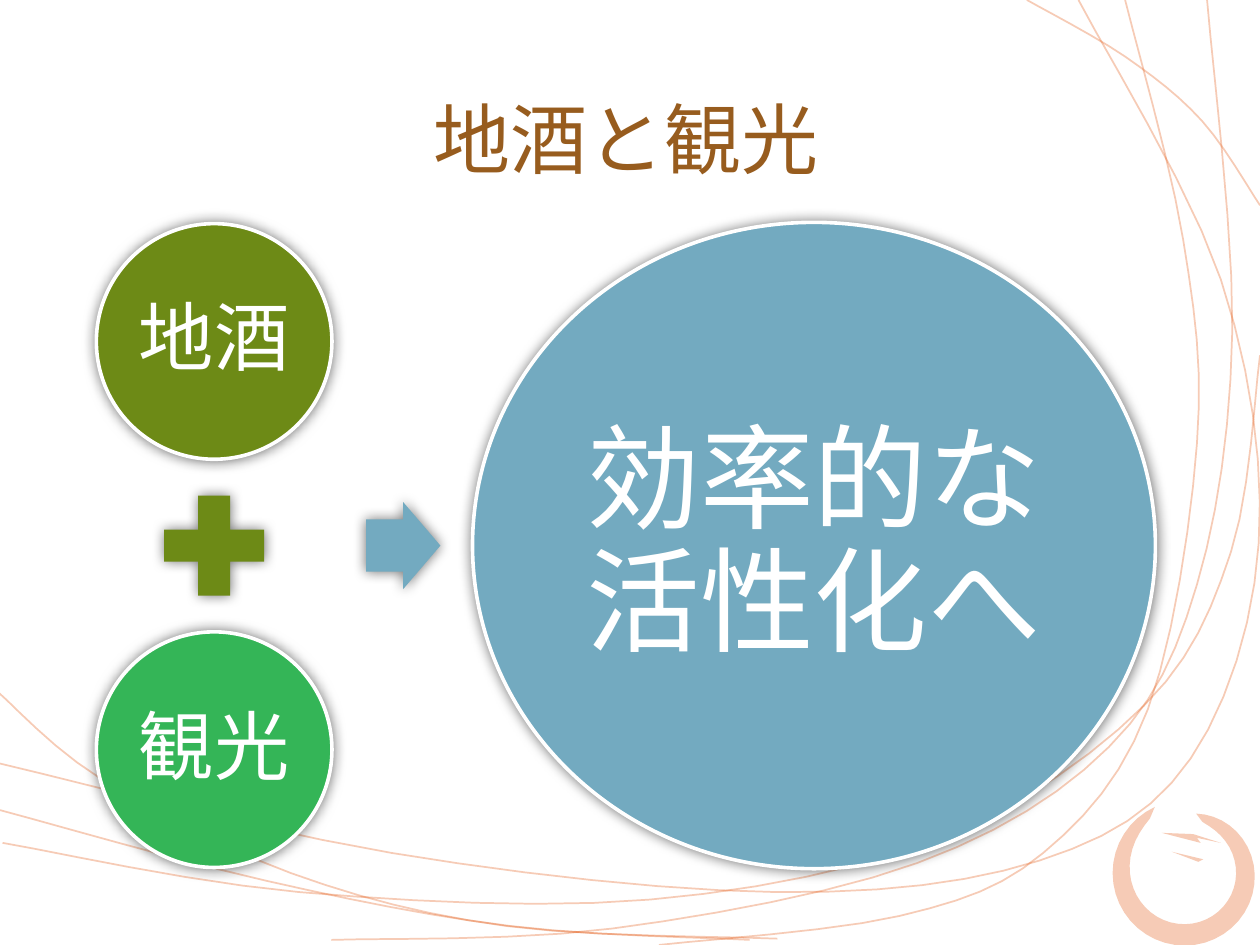
"""Build the slide that adds local sake and tourism into efficient revitalisation."""
from dataclasses import dataclass
from math import cos, pi, radians, sin

from lxml.etree import SubElement
from pptx import Presentation
from pptx.dml.color import RGBColor
from pptx.enum.shapes import MSO_SHAPE
from pptx.enum.text import MSO_ANCHOR, PP_ALIGN
from pptx.oxml.ns import qn
from pptx.util import Inches, Pt

ACCENT, WHITE, BROWN = "E3560E", "FFFFFF", "975C1E"
OLIVE, GREEN, BLUE = "6D8A16", "34B557", "73AAC0"
COLUMN_X, MIDDLE_Y, CIRCLE, CIRCLE_OFFSET = 1.7, 4.33, 1.87, 1.62
CURVE_STEPS, RING_STEPS = 6, 40

Outline = tuple[tuple[float, float], ...]


@dataclass(frozen=True)
class Part:
    preset: MSO_SHAPE
    center_x: float
    center_y: float
    width: float
    height: float
    color: str
    label: str = ""
    size: int = 0
    inset: float = 0
    adjustments: tuple[float, ...] = ()


PARTS = (
    Part(MSO_SHAPE.OVAL, COLUMN_X, MIDDLE_Y - CIRCLE_OFFSET, CIRCLE, CIRCLE, OLIVE, "地酒", 43, 0.05),
    Part(MSO_SHAPE.MATH_PLUS, COLUMN_X, MIDDLE_Y, 1.08, 1.08, OLIVE),
    Part(MSO_SHAPE.OVAL, COLUMN_X, MIDDLE_Y + CIRCLE_OFFSET, CIRCLE, CIRCLE, GREEN, "観光", 43, 0.05),
    Part(MSO_SHAPE.RIGHT_ARROW, 3.2, MIDDLE_Y, 0.59, 0.69, BLUE, adjustments=(0.6, 0.5)),
    Part(MSO_SHAPE.OVAL, 6.46, MIDDLE_Y, 5.42, 5.13, BLUE, "効率的な活性化へ", 65, 0.08),
)

STRANDS: tuple[Outline, ...] = (
    ((-0.03, 5.48), (0.8, 6.18), (2.31, 6.93), (4.02, 7.35), (6.17, 7.45)),
    ((5.23, 7.5), (7.14, 7.27), (8.28, 6.77), (9.11, 5.63), (9.5, 3.52), (9.39, 1.9), (8.93, 0)),
    ((0, 6.06), (3.11, 6.77), (6.16, 7.08), (8.25, 6.83), (9.45, 6.02), (9.99, 4.31), (9.69, 2.22),
     (8.56, 0)),
    ((0.02, 6.69), (2.37, 7.08), (5.16, 7.14), (7.49, 6.64), (9.08, 5.6), (9.77, 4.38), (10, 2.82)),
    ((2.63, 7.46), (4.86, 7.37), (7.28, 6.85), (8.8, 5.93), (9.5, 4.64), (9.78, 2.63), (9.58, 0)),
    ((8.15, 0), (8.93, 0.45), (9.54, 0.96), (10, 1.63)),
    ((0, 6.43), (2.11, 6.99), (4.05, 7.35), (5.95, 7.46)),
)

BRISTLES: tuple[Outline, ...] = (
    ((9.22, 6.61), (9.47, 6.62), (9.69, 6.69), (9.5, 6.65), (9.53, 6.69)),
    ((9.3, 6.76), (9.55, 6.82), (9.51, 6.84)),
)


def rgb(color: str) -> RGBColor:
    """Turn a hex string into a colour."""
    return RGBColor.from_string(color)


def apply(target, values: dict) -> None:
    """Set every attribute in values on the target."""
    for key, value in values.items():
        setattr(target, key, value)


def spline(a: float, b: float, c: float, d: float, t: float) -> float:
    """Blend from b to c so that the curve runs smoothly past a and d."""
    bend = (2 * a - 5 * b + 4 * c - d) * t**2 + (3 * b - a - 3 * c + d) * t**3
    return b + ((c - a) * t + bend) / 2


def smooth(knots: Outline) -> Outline:
    """Return a smooth curve through the knots."""
    padded = (knots[0], *knots, knots[-1])
    curve = [
        tuple(spline(*axis, step / CURVE_STEPS) for axis in zip(*padded[index:index + 4]))
        for index in range(len(knots) - 1)
        for step in range(CURVE_STEPS)
    ]
    return (*curve, knots[-1])


def brush_ring(center_x: float, center_y: float, radius: float, thickness: float) -> Outline:
    """Return an open ring that tapers at both ends."""
    outer, inner = [], []
    for step in range(RING_STEPS + 1):
        share = step / RING_STEPS
        angle = radians(245 - 325 * share)
        edge = radius - 0.1 * share**4
        width = thickness * max(sin(pi * share), 0) ** 0.4
        for side, reach in ((outer, edge), (inner, edge - width)):
            side.append((center_x + reach * cos(angle), center_y + reach * sin(angle)))
    return (*outer, *reversed(inner))


def write_label(frame, text: str, size: int, color: str, inset: float, spacing: float = 1.0) -> None:
    """Write one centred paragraph into a text frame."""
    margins = {f"margin_{side}": Inches(inset) for side in ("left", "top", "right", "bottom")}
    apply(frame, {"word_wrap": True, "vertical_anchor": MSO_ANCHOR.MIDDLE, **margins})
    paragraph = frame.paragraphs[0]
    apply(paragraph, {"text": text, "alignment": PP_ALIGN.CENTER, "line_spacing": spacing})
    font = paragraph.runs[0].font
    apply(font, {"name": "Calibri", "size": Pt(size)})
    font.color.rgb = rgb(color)


def draw_outline(shapes, outline: Outline, closed: bool, opacity: int) -> None:
    """Draw a translucent accent strand, or a filled brush stroke when closed."""
    points = [(Inches(x), Inches(y)) for x, y in outline]
    builder = shapes.build_freeform(*points[0])
    builder.add_line_segments(points[1:], close=closed)
    stroke = builder.convert_to_shape()
    stroke.shadow.inherit = False
    painted, empty = (stroke.fill, stroke.line.fill) if closed else (stroke.line.fill, stroke.fill)
    empty.background()
    painted.solid()
    painted.fore_color.rgb = rgb(ACCENT)
    if not closed:
        stroke.line.width = Pt(1)
    for color in stroke._element.spPr.iter(qn("a:srgbClr")):
        SubElement(color, qn("a:alpha"), val=str(opacity * 1000))


def add_glow(shape) -> None:
    """Give a shape a soft black shadow all around."""
    shape.shadow.inherit = False
    effects = shape._element.spPr.find(qn("a:effectLst"))
    shadow = SubElement(effects, qn("a:outerShdw"), blurRad=str(Pt(7.5)), dist="0", dir="0", rotWithShape="0")
    black = SubElement(shadow, qn("a:srgbClr"), val="000000")
    SubElement(black, qn("a:alpha"), val="55000")


def draw_part(shapes, part: Part) -> None:
    """Draw one element of the equation around its centre."""
    left, top = part.center_x - part.width / 2, part.center_y - part.height / 2
    shape = shapes.add_shape(part.preset, Inches(left), Inches(top), Inches(part.width), Inches(part.height))
    for index, value in enumerate(part.adjustments):
        shape.adjustments[index] = value
    shape.fill.solid()
    shape.fill.fore_color.rgb = rgb(part.color)
    add_glow(shape)
    if part.label:
        shape.line.color.rgb = rgb(WHITE)
        shape.line.width = Pt(2.07)
        write_label(shape.text_frame, part.label, part.size, WHITE, part.inset, 0.9)
    else:
        shape.line.fill.background()


def main() -> None:
    """Build and save the slide."""
    deck = Presentation()
    apply(deck, {"slide_width": Inches(10), "slide_height": Inches(7.5)})
    shapes = deck.slides.add_slide(deck.slide_layouts[6]).shapes
    for strand in STRANDS:
        draw_outline(shapes, smooth(strand), closed=False, opacity=29)
    for brush_stroke in (brush_ring(9.41, 6.93, 0.58, 0.17), *BRISTLES):
        draw_outline(shapes, brush_stroke, closed=True, opacity=30)
    title = shapes.add_textbox(Inches(0.47), Inches(0.47), Inches(9), Inches(1.25))
    write_label(title.text_frame, "地酒と観光", 44, BROWN, 0.05)
    for part in PARTS:
        draw_part(shapes, part)
    deck.save("out.pptx")


if __name__ == "__main__":
    main()
